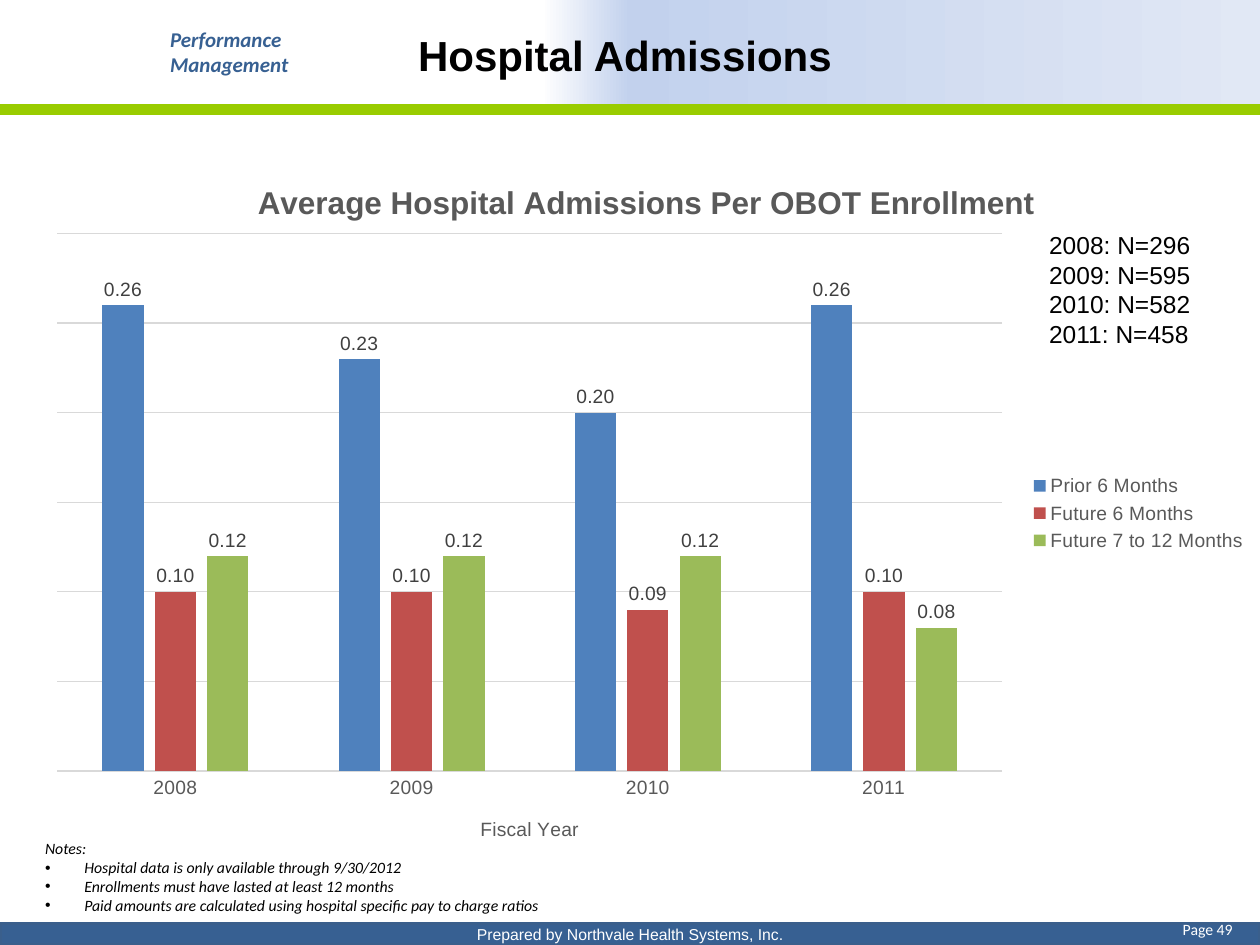
from lxml import etree
from copy import deepcopy
from pptx import Presentation
from pptx.chart.data import CategoryChartData
from pptx.dml.color import RGBColor
from pptx.enum.chart import XL_CHART_TYPE, XL_LABEL_POSITION, XL_LEGEND_POSITION, XL_TICK_MARK
from pptx.enum.shapes import MSO_SHAPE
from pptx.enum.text import MSO_ANCHOR, MSO_AUTO_SIZE, PP_ALIGN
from pptx.oxml.ns import qn
from pptx.util import Cm, Pt

COLUMN = XL_CHART_TYPE.COLUMN_CLUSTERED
OUTSIDE = XL_LABEL_POSITION.OUTSIDE_END
LEGEND_RIGHT = XL_LEGEND_POSITION.RIGHT
NO_TICK = XL_TICK_MARK.NONE
RECT, BEVEL = MSO_SHAPE.RECTANGLE, MSO_SHAPE.BEVEL
TOP, MIDDLE, BOTTOM = MSO_ANCHOR.TOP, MSO_ANCHOR.MIDDLE, MSO_ANCHOR.BOTTOM
LEFT, CENTER, RIGHT = PP_ALIGN.LEFT, PP_ALIGN.CENTER, PP_ALIGN.RIGHT
FIT = MSO_AUTO_SIZE.SHAPE_TO_FIT_TEXT

BLACK = RGBColor(0x00, 0x00, 0x00)
WHITE = RGBColor(0xFF, 0xFF, 0xFF)
SKY = RGBColor(0xC2, 0xD1, 0xED)
PALE = RGBColor(0xE1, 0xE8, 0xF5)
NAVY = RGBColor(0x37, 0x60, 0x92)
EDGE = RGBColor(0x3A, 0x5F, 0x8C)
LIME = RGBColor(0x99, 0xCC, 0x00)
GRAY = RGBColor(0x59, 0x59, 0x59)
DARK = RGBColor(0x40, 0x40, 0x40)
GRID = RGBColor(0xD9, 0xD9, 0xD9)
BLUE = RGBColor(0x4F, 0x81, 0xBD)
RED = RGBColor(0xC0, 0x50, 0x4D)
GREEN = RGBColor(0x9B, 0xBB, 0x59)

WIDE, HIGH = 25.4, 19.05
YEARS = ["2008", "2009", "2010", "2011"]
COUNTS = [296, 595, 582, 458]
SERIES = [
    ("Prior 6 Months", [0.26, 0.23, 0.20, 0.26], BLUE),
    ("Future 6 Months", [0.10, 0.10, 0.09, 0.10], RED),
    ("Future 7 to 12 Months", [0.12, 0.12, 0.12, 0.08], GREEN),
]
NOTES = [
    "Hospital data is only available through 9/30/2012",
    "Enrollments must have lasted at least 12 months",
    "Paid amounts are calculated using hospital specific pay to charge ratios",
]


def style(font, size, color, name="Arial", bold=False, italic=False):
    font.size, font.name = Pt(size), name
    font.color.rgb = color
    font.bold, font.italic = bold, italic


def write(frame, lines, align=LEFT, **look):
    for i, line in enumerate(lines):
        para = frame.paragraphs[0] if i == 0 else frame.add_paragraph()
        para.alignment = align
        run = para.add_run()
        run.text = line
        style(run.font, **look)


def add_text(slide, box, lines, anchor=TOP, wrap=True, fit=True, **look):
    frame = slide.shapes.add_textbox(*map(Cm, box)).text_frame
    frame.word_wrap = wrap
    frame.vertical_anchor = anchor
    if fit:
        frame.auto_size = FIT
    write(frame, lines, **look)
    return frame


def add_bar(slide, kind, box):
    bar = slide.shapes.add_shape(kind, *map(Cm, box))
    bar.shadow.inherit = False
    return bar


def paint(bar, fill, line, width):
    bar.fill.solid()
    bar.fill.fore_color.rgb = fill
    bar.line.color.rgb = line
    bar.line.width = Pt(width)


def fade(bar, stops):
    """Fill the bar from left to right with (position, colour) stops."""
    bar.line.fill.background()
    bar.fill.gradient()
    bar.fill.gradient_angle = 0
    nodes = bar.fill.gradient_stops
    group = bar.element.spPr.find(".//" + qn("a:gsLst"))
    for _ in range(len(stops) - len(nodes)):
        group.append(deepcopy(group[-1]))
    for node, (place, color) in zip(bar.fill.gradient_stops, stops):
        node.position = place
        node.color.rgb = color


def add_header(slide, x, y, w, h):
    rule = 0.2
    band = add_bar(slide, RECT, (x, y, w, h - rule))
    fade(band, [(0.43, WHITE), (0.5, SKY), (1, PALE)])
    add_text(slide, (x + 3.18, y + 0.41, 2.92, 1.3), ["Performance", "Management"],
             wrap=False, size=12, color=NAVY, name="Calibri", bold=True, italic=True)
    strip = add_bar(slide, BEVEL, (x, y + h - rule, w, rule))
    paint(strip, LIME, LIME, 0.75)
    add_text(slide, (x + 2.34, y + 0.43, 20.52, 1.35), ["Hospital Admissions"],
             anchor=MIDDLE, fit=False, align=CENTER, size=24, color=BLACK, bold=True)


def add_footer(slide, x, y, w, h):
    strip = add_bar(slide, RECT, (x, y, w, h))
    paint(strip, NAVY, EDGE, 2)
    strip.text_frame.vertical_anchor = MIDDLE
    write(strip.text_frame, ["Prepared by Northvale Health Systems, Inc."],
          align=CENTER, size=9, color=WHITE)
    add_text(slide, (x + w - 2.97, y - 0.2, 2.67, 0.64), ["Page 49"],
             align=RIGHT, size=9, color=WHITE, name="Calibri")


def add_notes(slide, *box):
    frame = add_text(slide, box, ["Notes:"] + NOTES, anchor=BOTTOM,
                     size=9, color=BLACK, name="Calibri", italic=True)
    for para in frame.paragraphs[1:]:
        props = para._p.get_or_add_pPr()
        props.set("marL", str(Cm(0.79)))
        props.set("indent", str(-Cm(0.79)))
        etree.SubElement(props, qn("a:buFont")).set("typeface", "Arial")
        etree.SubElement(props, qn("a:buChar")).set("char", "•")


def set_title(owner, text, size, bold):
    frame = owner.text_frame
    write(frame, [text], align=CENTER, size=size, color=GRAY, bold=bold)


def set_plot(chart, **parts):
    """Fix the inner plot area as fractions of the chart."""
    area = chart._chartSpace.chart.plotArea
    layout = area.find(qn("c:layout"))
    if layout is None:
        layout = etree.Element(qn("c:layout"))
        area.insert(0, layout)
    manual = etree.SubElement(layout, qn("c:manualLayout"))
    values = {"layoutTarget": "inner", "xMode": "edge", "yMode": "edge", **parts}
    for tag, value in values.items():
        etree.SubElement(manual, qn("c:" + tag)).set("val", str(value))


def add_graph(slide, *box):
    data = CategoryChartData(number_format="#,##0.00")
    data.categories = YEARS
    for name, values, _ in SERIES:
        data.add_series(name, values)
    chart = slide.shapes.add_chart(COLUMN, *map(Cm, box), data).chart
    style(chart.font, 11, BLACK)
    set_title(chart.chart_title, "Average Hospital Admissions Per OBOT Enrollment", 18, True)
    chart.chart_title.include_in_layout = False
    set_plot(chart, x=0.02, y=0.11, w=0.77, h=0.75)

    chart.has_legend = True
    chart.legend.position = LEGEND_RIGHT
    chart.legend.include_in_layout = False
    style(chart.legend.font, 11, GRAY)

    cats, vals = chart.category_axis, chart.value_axis
    set_title(cats.axis_title, "Fiscal Year", 11, False)
    cats.major_tick_mark = cats.minor_tick_mark = NO_TICK
    style(cats.tick_labels.font, 11, GRAY)
    vals.visible = False
    vals.minimum_scale, vals.maximum_scale, vals.major_unit = 0, 0.3, 0.05
    for line in (cats.format.line, vals.major_gridlines.format.line):
        line.color.rgb = GRID
        line.width = Pt(0.75)

    plot = chart.plots[0]
    plot.gap_width, plot.overlap = 219, -27
    plot.vary_by_categories = False
    for series, (_, _, color) in zip(plot.series, SERIES):
        series.format.fill.solid()
        series.format.fill.fore_color.rgb = color
        labels = series.data_labels
        labels.show_value = True
        labels.number_format = "#,##0.00"
        labels.number_format_is_linked = False
        labels.position = OUTSIDE
        style(labels.font, 11, DARK)


def add_counts(slide, *box):
    lines = [f"{year}: N={count}" for year, count in zip(YEARS, COUNTS)]
    add_text(slide, box, lines, size=14, color=BLACK)


def main():
    deck = Presentation()
    deck.slide_width, deck.slide_height = Cm(WIDE), Cm(HIGH)
    slide = deck.slides.add_slide(deck.slide_layouts[6])
    add_header(slide, 0, 0, WIDE, 2.31)
    add_footer(slide, 0, HIGH - 0.43, WIDE, 0.43)
    add_notes(slide, 0.66, 16.79, 13.54, 1.78)
    add_graph(slide, 0.66, 3.12, 24.74, 14.45)
    add_counts(slide, 20.9, 4.52, 3.81, 2.64)
    deck.save("out.pptx")


if __name__ == "__main__":
    main()
